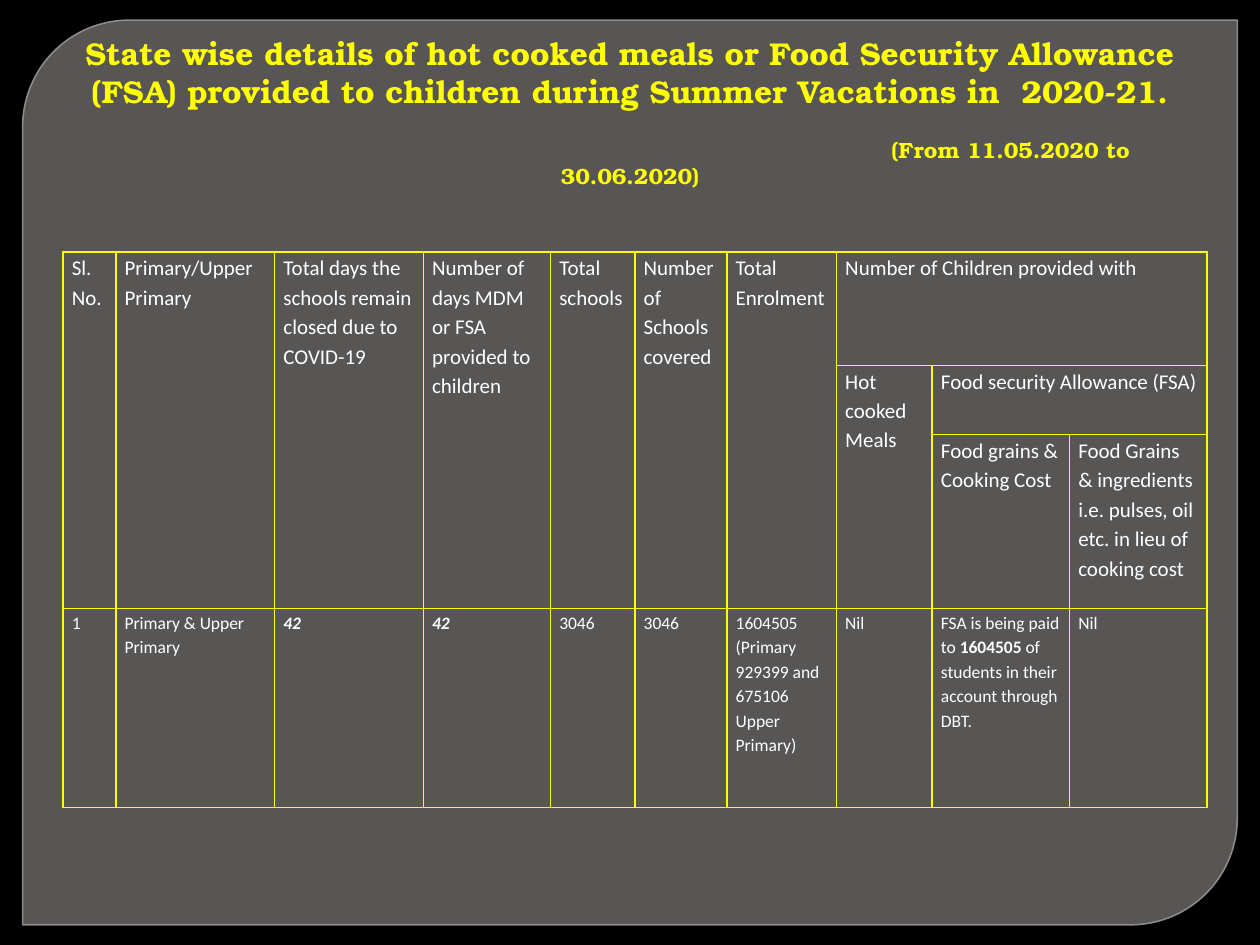
from lxml.etree import SubElement
from pptx import Presentation
from pptx.dml.color import RGBColor
from pptx.enum.shapes import MSO_SHAPE
from pptx.enum.text import MSO_ANCHOR, PP_ALIGN
from pptx.oxml import parse_xml
from pptx.oxml.ns import nsdecls, qn
from pptx.util import Inches, Pt

BLACK = RGBColor(0x00, 0x00, 0x00)
GREY = RGBColor(0x88, 0x84, 0x84)
LINE_GREY = RGBColor(0x9D, 0x98, 0x98)
YELLOW = RGBColor(0xFF, 0xFF, 0x00)
WHITE = RGBColor(0xFF, 0xFF, 0xFF)


def set_alpha(fill, percent):
    color = fill._xPr.find(qn("a:solidFill"))[0]
    SubElement(color, qn("a:alpha")).set("val", str(percent * 1000))


def add_borders(cell):
    properties = cell._tc.get_or_add_tcPr()
    for position, side in enumerate(("lnL", "lnR", "lnT", "lnB")):
        border = parse_xml(
            f'<a:{side} {nsdecls("a")} w="{Pt(1)}"><a:solidFill>'
            f'<a:srgbClr val="{YELLOW}"/></a:solidFill></a:{side}>'
        )
        properties.insert(position, border)


presentation = Presentation()
presentation.slide_width = Inches(10)
presentation.slide_height = Inches(7.5)
slide = presentation.slides.add_slide(presentation.slide_layouts[5])
slide.background.fill.solid()
slide.background.fill.fore_color.rgb = BLACK

# Rounded panel behind everything
panel = slide.shapes.add_shape(
    MSO_SHAPE.ROUND_2_DIAG_RECTANGLE, Inches(0.18), Inches(0.16), Inches(9.64), Inches(7.18)
)
panel.adjustments[0] = 0.118
panel.adjustments[1] = 0
panel.shadow.inherit = False
panel.fill.solid()
panel.fill.fore_color.rgb = GREY
set_alpha(panel.fill, 65)
panel.line.color.rgb = LINE_GREY
panel.line.width = Pt(0.87)
set_alpha(panel.line.fill, 88)
slide.shapes._spTree.insert(2, panel._element)

# Title, with the period indented towards the right
title = slide.shapes.title
title.left, title.top, title.width, title.height = (
    Inches(0.5), Inches(0.3), Inches(9), Inches(1.25)
)
title_frame = title.text_frame
title_frame.word_wrap = True
title_frame.vertical_anchor = MSO_ANCHOR.BOTTOM
title_frame.text = (
    "State wise details of hot cooked meals or Food Security Allowance (FSA) "
    "provided to children during Summer Vacations in  2020-21.\n"
    "(From 11.05.2020 to 30.06.2020)"
)
for paragraph, size in zip(title_frame.paragraphs, (18, 12.6)):
    paragraph.alignment = PP_ALIGN.CENTER
    paragraph.space_before = Pt(0)
    paragraph.font.name = "TeX Gyre Bonum"
    paragraph.font.size = Pt(size)
    paragraph.font.bold = True
    paragraph.font.color.rgb = YELLOW
period = title_frame.paragraphs[1]
period.space_before = Pt(15)
period._p.get_or_add_pPr().set("marL", "0")
period._p.get_or_add_pPr().set("indent", str(Inches(6.04)))

# Table grid
column_widths = (0.42, 1.26, 1.18, 1.01, 0.67, 0.73, 0.87, 0.76, 1.09, 1.09)
row_heights = (0.9, 0.55, 1.38, 1.58)
table = slide.shapes.add_table(
    len(row_heights), len(column_widths), Inches(0.5), Inches(2), Inches(9.08), Inches(4.42)
).table
table.first_row = False
table.horz_banding = False
for column, width in zip(table.columns, column_widths):
    column.width = Inches(width)
for row, height in zip(table.rows, row_heights):
    row.height = Inches(height)

# Merged headings: first and last cell
merges = [((0, column), (2, column)) for column in range(7)]
merges += [((0, 7), (0, 9)), ((1, 7), (2, 7)), ((1, 8), (1, 9))]
for first, last in merges:
    table.cell(*first).merge(table.cell(*last))

# Cell texts, each row starting at its first filled column; ** marks bold
rows = (
    (0, ("Sl. No.", "Primary/Upper Primary",
         "Total days the schools remain closed due to COVID-19",
         "Number of days MDM or FSA provided to children",
         "Total schools", "Number of Schools covered", "Total Enrolment",
         "Number of Children provided with")),
    (7, ("Hot cooked Meals", "Food security Allowance (FSA)")),
    (8, ("Food grains & Cooking Cost",
         "Food Grains & ingredients i.e. pulses, oil etc. in lieu of cooking cost")),
    (0, ("1", "Primary & Upper Primary", "**42**", "**42**", "3046", "3046",
         "1604505 (Primary 929399 and 675106 Upper Primary)", "Nil",
         "FSA is being paid to **1604505** of students in their account through DBT.",
         "Nil")),
)
for row_index, (start, texts) in enumerate(rows):
    for column_index, text in enumerate(texts, start):
        paragraph = table.cell(row_index, column_index).text_frame.paragraphs[0]
        paragraph.line_spacing = 1.15
        paragraph.font.name = "Calibri"
        paragraph.font.size = Pt(10 if row_index == 3 else 12)
        paragraph.font.color.rgb = WHITE
        for part_index, part in enumerate(text.split("**")):
            if part:
                run = paragraph.add_run()
                run.text = part
                run.font.bold = part_index % 2 == 1
                run.font.italic = part == "42"

# Cell margins, fill and borders
for row_index in range(len(row_heights)):
    for cell in table.rows[row_index].cells:
        cell.margin_left = cell.margin_right = Inches(0.07)
        cell.margin_top = Inches(0.01 if row_index == 3 else 0)
        cell.margin_bottom = Inches(0)
        cell.fill.background()
        add_borders(cell)

presentation.save("out.pptx")
